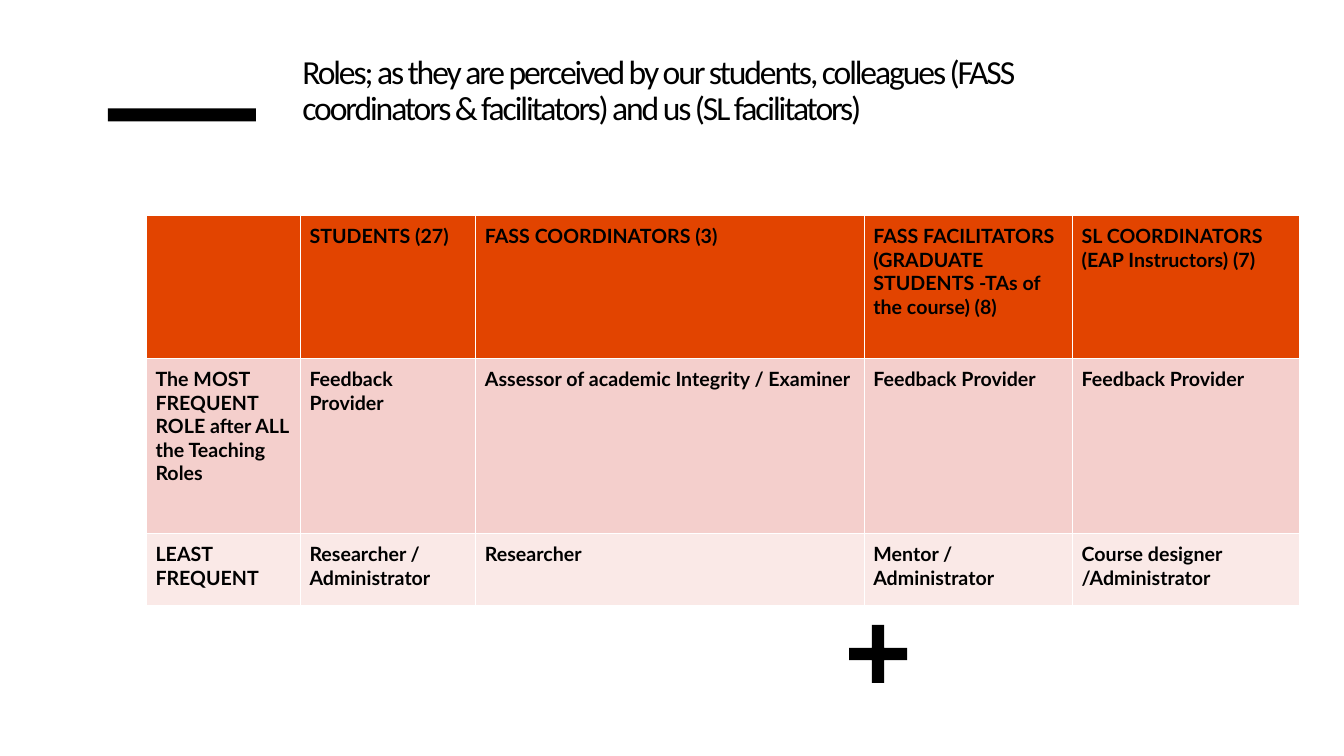
"""Build a slide with a table of perceived roles."""
from dataclasses import dataclass

from lxml import etree
from pptx import Presentation
from pptx import util as u
from pptx.dml.color import RGBColor
from pptx.enum import shapes, text
from pptx.oxml.ns import qn


@dataclass(frozen=True)
class Theme:
    """Colours, fonts and type sizes."""
    ink: str = "000000"
    paper: str = "FFFFFF"
    row_fills: tuple[str, ...] = ("E24400", "F4CFCC", "FAE9E7")
    title_font: str = "Calibri"
    table_font: str = "Lato"
    title_size: int = 24
    table_size: int = 14
    title_spacing: float = -1.5
    border_width: float = 1


@dataclass(frozen=True)
class Box:
    """A place on the slide in centimetres."""
    left: float
    top: float
    width: float
    height: float

    def lengths(self) -> tuple[u.Cm, ...]:
        """Return the four lengths in order."""
        return tuple(u.Cm(v) for v in (self.left, self.top, self.width, self.height))


@dataclass(frozen=True)
class Mark:
    """A solid decorative shape."""
    kind: shapes.MSO_SHAPE
    box: Box
    adjustment: float | None = None


THEME = Theme()
TITLE = ("Roles; as they are perceived by our students, colleagues "
         "(FASS coordinators & facilitators) and us (SL facilitators)")
TITLE_BOX = Box(7.37, 0.86, 21.82, 4.34)
TITLE_BOTTOM_INSET = 1.98
MARKS = (
    Mark(shapes.MSO_SHAPE.CROSS, Box(21.4, 15.75, 1.46, 1.46), 0.395),
    Mark(shapes.MSO_SHAPE.RECTANGLE, Box(2.72, 2.73, 3.73, 0.33)),
)
COLUMNS = (3.88, 4.42, 9.79, 5.25, 5.71)
ROWS = (3.61, 4.41, 1.83)
TABLE_BOX = Box(3.69, 5.42, sum(COLUMNS), sum(ROWS))
CELL_INSET = 0.23
ROLES = (
    ("", "STUDENTS (27)", "FASS COORDINATORS (3)",
     "FASS FACILITATORS (GRADUATE STUDENTS -TAs of the course) (8)",
     "SL COORDINATORS (EAP Instructors) (7)"),
    ("The MOST FREQUENT ROLE after ALL the Teaching Roles", "Feedback Provider",
     "Assessor of academic Integrity / Examiner", "Feedback Provider",
     "Feedback Provider"),
    ("LEAST FREQUENT", "Researcher / Administrator", "Researcher",
     "Mentor / Administrator", "Course designer /Administrator"),
)


def paint(fill, colour: str) -> None:
    """Make a fill solid in the given colour."""
    fill.solid()
    fill.fore_color.rgb = RGBColor.from_string(colour)


def style_runs(p, name: str, size: float, bold: bool) -> None:
    """Format every run of a paragraph."""
    for r in p.runs:
        r.font.name = name
        r.font.size = u.Pt(size)
        r.font.bold = bold
        r.font.color.rgb = RGBColor.from_string(THEME.ink)


def add_title(slide) -> None:
    """Add the tightly spaced heading."""
    tf = slide.shapes.add_textbox(*TITLE_BOX.lengths()).text_frame
    tf.word_wrap = True
    tf.vertical_anchor = text.MSO_ANCHOR.BOTTOM
    tf.margin_bottom = u.Cm(TITLE_BOTTOM_INSET)
    p = tf.paragraphs[0]
    p.text = TITLE
    p.line_spacing = 0.9
    style_runs(p, THEME.title_font, THEME.title_size, False)
    for r in p.runs:
        r.font._element.set("spc", str(int(THEME.title_spacing * 100)))


def add_mark(slide, mark: Mark) -> None:
    """Add one solid shape."""
    sp = slide.shapes.add_shape(mark.kind, *mark.box.lengths())
    sp.shadow.inherit = False
    paint(sp.fill, THEME.ink)
    sp.line.fill.background()
    if mark.adjustment is not None:
        sp.adjustments[0] = mark.adjustment


def add_borders(cell) -> None:
    """Give a cell thin borders on all four sides."""
    tc_pr = cell._tc.get_or_add_tcPr()
    for i, side in enumerate(("a:lnL", "a:lnR", "a:lnT", "a:lnB")):
        ln = etree.Element(qn(side), w=str(u.Pt(THEME.border_width)))
        solid = etree.SubElement(ln, qn("a:solidFill"))
        etree.SubElement(solid, qn("a:srgbClr"), val=THEME.paper)
        tc_pr.insert(i, ln)


def fill_cell(cell, words: str, colour: str) -> None:
    """Write and format one table cell."""
    cell.margin_left = cell.margin_right = u.Cm(CELL_INSET)
    cell.margin_top = cell.margin_bottom = u.Cm(CELL_INSET)
    paint(cell.fill, colour)
    add_borders(cell)
    p = cell.text_frame.paragraphs[0]
    p.text = words
    style_runs(p, THEME.table_font, THEME.table_size, True)


def add_roles(slide) -> None:
    """Add the table of roles."""
    table = slide.shapes.add_table(len(ROWS), len(COLUMNS), *TABLE_BOX.lengths()).table
    table.horz_banding = False
    for column, width in zip(table.columns, COLUMNS):
        column.width = u.Cm(width)
    for row, height, words, colour in zip(table.rows, ROWS, ROLES, THEME.row_fills):
        row.height = u.Cm(height)
        for cell, entry in zip(row.cells, words):
            fill_cell(cell, entry, colour)


def main() -> None:
    """Build and save the presentation."""
    prs = Presentation()
    prs.slide_width, prs.slide_height = u.Cm(33.87), u.Cm(19.05)
    slide = prs.slides.add_slide(prs.slide_layouts[6])
    paint(slide.background.fill, THEME.paper)
    add_title(slide)
    for mark in MARKS:
        add_mark(slide, mark)
    add_roles(slide)
    prs.save("out.pptx")


if __name__ == "__main__":
    main()
